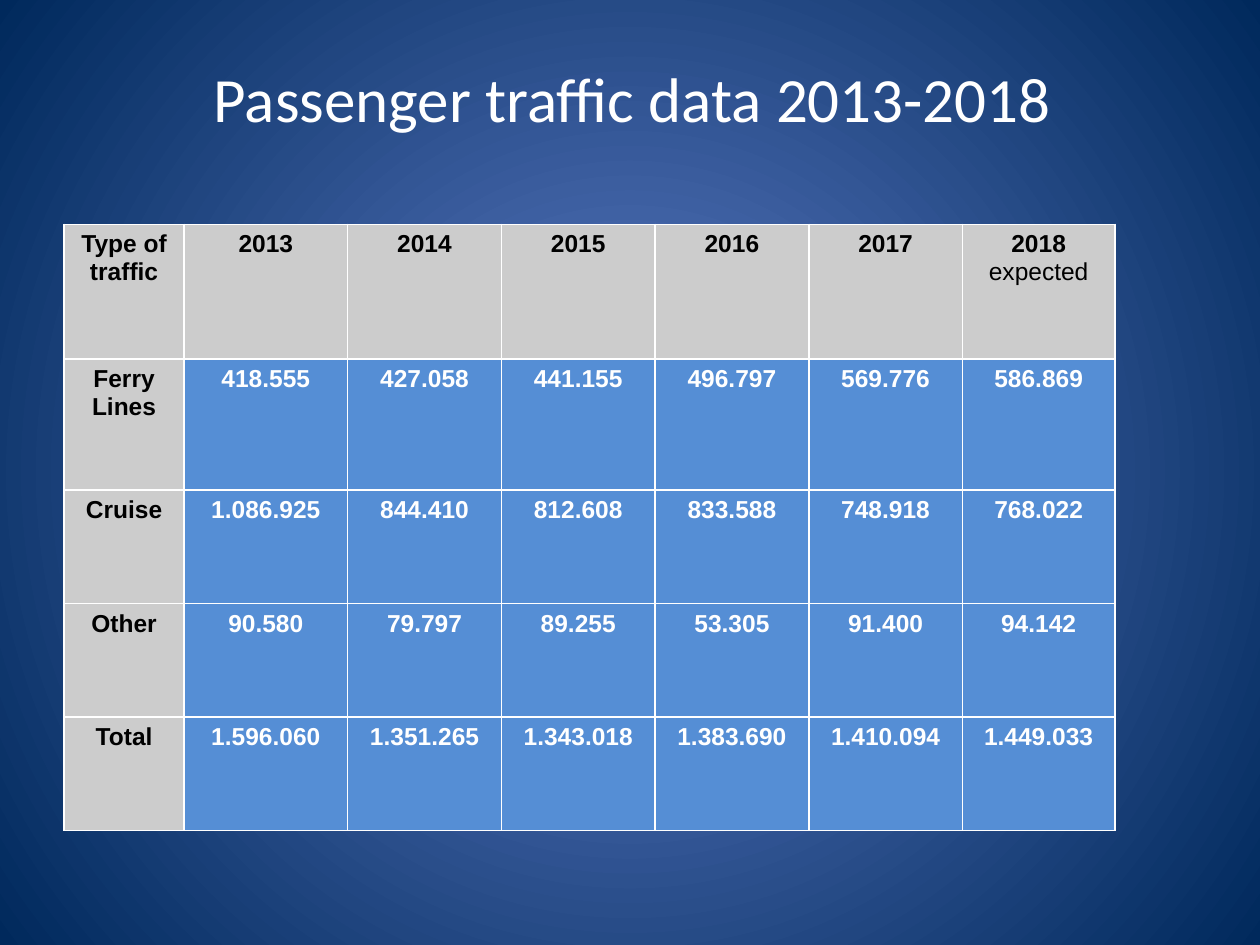
"""Build the passenger traffic slide."""
import pptx
import pptx.dml.color
import pptx.enum.text
import pptx.oxml
import pptx.oxml.ns
import pptx.util

Inches = pptx.util.Inches
Pt = pptx.util.Pt
RGBColor = pptx.dml.color.RGBColor
CENTER = pptx.enum.text.PP_ALIGN.CENTER

WHITE = RGBColor(0xFF, 0xFF, 0xFF)
BLACK = RGBColor(0, 0, 0)
GREY = RGBColor(0xCC, 0xCC, 0xCC)
BLUE = RGBColor(0x55, 0x8E, 0xD5)
GLOW = RGBColor(0x5E, 0x7C, 0xC5)
NAVY = RGBColor(0x00, 0x29, 0x5C)

COL_WIDTHS = [0.95, 1.3] + [1.22] * 4 + [1.21]
ROW_HEIGHTS = [1.07, 1.04] + [0.9] * 3
TRAFFIC = [
    ["Type of traffic", "2013", "2014", "2015", "2016", "2017", "2018\nexpected"],
    ["Ferry\nLines", "418.555", "427.058", "441.155", "496.797", "569.776", "586.869"],
    ["Cruise", "1.086.925", "844.410", "812.608", "833.588", "748.918", "768.022"],
    ["Other", "90.580", "79.797", "89.255", "53.305", "91.400", "94.142"],
    ["Total", "1.596.060", "1.351.265", "1.343.018", "1.383.690", "1.410.094", "1.449.033"],
]


def set_background(s):
    fill = s.background.fill
    fill.gradient()
    for stop, color, position in zip(fill.gradient_stops, (GLOW, NAVY), (0, 1)):
        stop.color.rgb = color
        stop.position = position
    grad = s.element.find(".//" + pptx.oxml.ns.qn("a:gradFill"))
    linear = grad.find(pptx.oxml.ns.qn("a:lin"))
    grad.replace(linear, pptx.oxml.parse_xml(
        f'<a:path {pptx.oxml.ns.nsdecls("a")} path="circle">'
        '<a:fillToRect l="50000" t="50000" r="50000" b="50000"/></a:path>'))


def format_paragraph(p, font, size, color, bold):
    p.alignment = CENTER
    p.font.name = font
    p.font.size = Pt(size)
    p.font.color.rgb = color
    p.font.bold = bold


def set_title(s, text):
    sp = s.shapes.title
    sp.left, sp.top, sp.width, sp.height = map(Inches, (0.91, 0.29, 8.22, 0.97))
    tf = sp.text_frame
    tf.text = text
    tf.vertical_anchor = pptx.enum.text.MSO_ANCHOR.MIDDLE
    format_paragraph(tf.paragraphs[0], "Calibri", 36, WHITE, False)


def add_borders(cell):
    tc_pr = cell._tc.get_or_add_tcPr()
    for i, side in enumerate("LRTB"):
        tc_pr.insert(i, pptx.oxml.parse_xml(
            f'<a:ln{side} {pptx.oxml.ns.nsdecls("a")} w="{Pt(1)}">'
            f'<a:solidFill><a:srgbClr val="{WHITE}"/></a:solidFill></a:ln{side}>'))


def fill_cell(cell, text, is_header):
    cell.text = text
    cell.fill.solid()
    cell.fill.fore_color.rgb = GREY if is_header else BLUE
    for p in cell.text_frame.paragraphs:
        color = BLACK if is_header else WHITE
        format_paragraph(p, "Arial", 14, color, p.text != "expected")
    add_borders(cell)


def add_traffic_table(s):
    frame = s.shapes.add_table(
        len(ROW_HEIGHTS), len(COL_WIDTHS), Inches(0.51), Inches(1.78),
        Inches(sum(COL_WIDTHS)), Inches(sum(ROW_HEIGHTS)))
    table = frame.table
    for column, width in zip(table.columns, COL_WIDTHS):
        column.width = Inches(width)
    for row, height in zip(table.rows, ROW_HEIGHTS):
        row.height = Inches(height)
    for i, values in enumerate(TRAFFIC):
        for j, text in enumerate(values):
            fill_cell(table.cell(i, j), text, i == 0 or j == 0)


def main():
    prs = pptx.Presentation()
    prs.slide_width, prs.slide_height = Inches(10), Inches(7.5)
    s = prs.slides.add_slide(prs.slide_layouts[5])
    set_background(s)
    set_title(s, "Passenger traffic data 2013-2018")
    add_traffic_table(s)
    prs.save("out.pptx")


if __name__ == "__main__":
    main()
